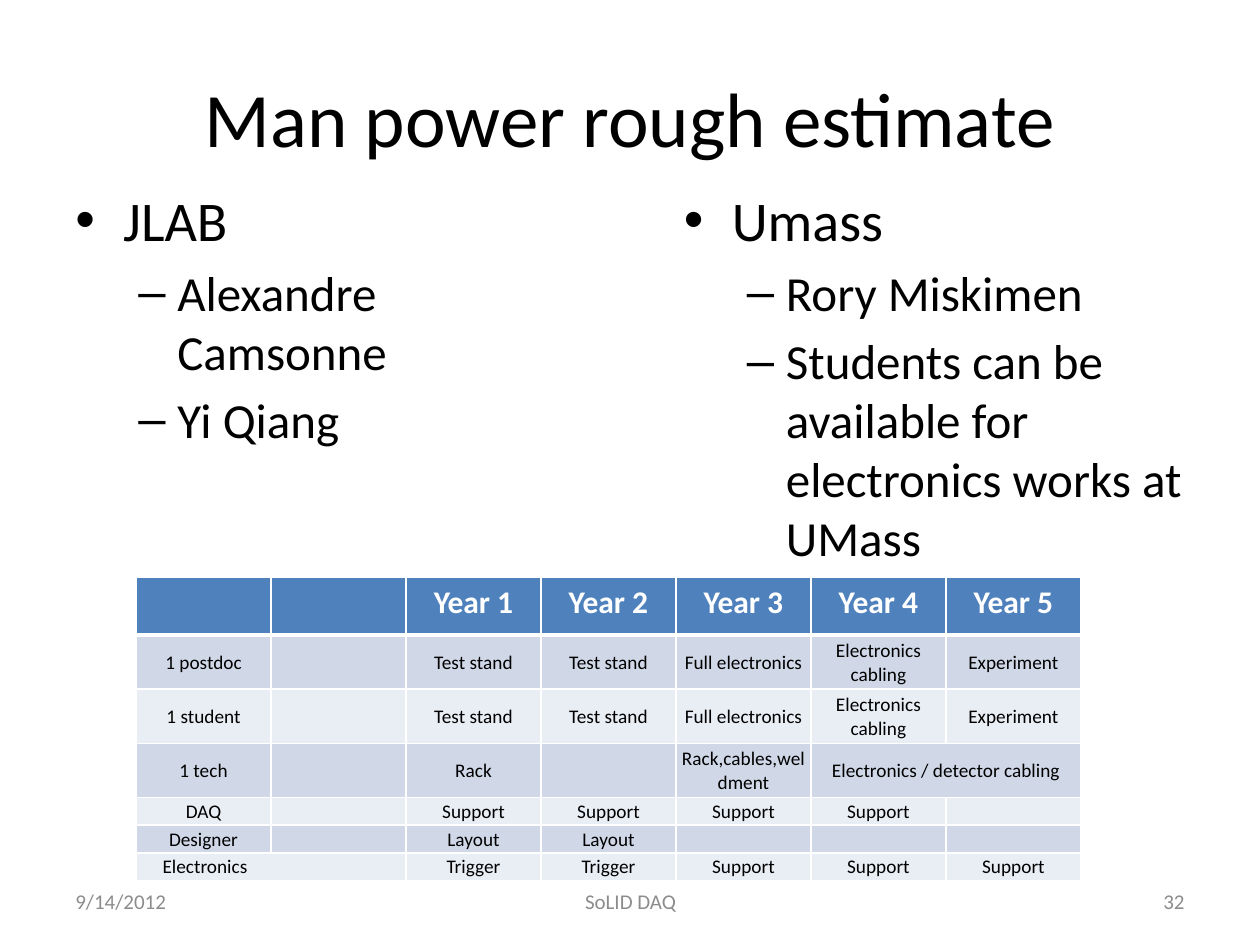
from lxml import etree
from pptx import Presentation
from pptx.dml.color import RGBColor
from pptx.enum.text import MSO_ANCHOR, PP_ALIGN
from pptx.oxml.ns import qn
from pptx.util import Pt

PX = 9144  # 100 px to the inch
FONT = "Calibri"
BLACK = RGBColor(0x00, 0x00, 0x00)
WHITE = RGBColor(0xFF, 0xFF, 0xFF)
GRAY = RGBColor(0x8C, 0x8C, 0x8C)
HEADER_BLUE = RGBColor(0x4F, 0x81, 0xBD)
BANDS = (RGBColor(0xD0, 0xD8, 0xE8), RGBColor(0xE9, 0xED, 0xF4))
LEFT, CENTER, RIGHT = PP_ALIGN.LEFT, PP_ALIGN.CENTER, PP_ALIGN.RIGHT
TOP, MIDDLE = MSO_ANCHOR.TOP, MSO_ANCHOR.MIDDLE

# Bullet level: character, text size, left margin px, hanging indent px
LEVELS = (("•", 32, 38, 38), ("–", 28, 81, 31))

JLAB = [(0, "JLAB"), (1, "Alexandre Camsonne"), (1, "Yi Qiang")]
UMASS = [
    (0, "Umass"),
    (1, "Rory Miskimen"),
    (1, "Students can be available for electronics works at UMass"),
]

ROW_HEIGHTS = (46, 43, 43, 43, 22, 22, 22)
PLAN = [
    ["", "", "Year 1", "Year 2", "Year 3", "Year 4", "Year 5"],
    ["1 postdoc", "", "Test stand", "Test stand", "Full electronics",
     "Electronics cabling", "Experiment"],
    ["1 student", "", "Test stand", "Test stand", "Full electronics",
     "Electronics cabling", "Experiment"],
    ["1 tech", "", "Rack", "", "Rack,cables,weldment",
     "Electronics / detector cabling", ""],
    ["DAQ", "", "Support", "Support", "Support", "Support", ""],
    ["Designer", "", "Layout", "Layout", "", "", ""],
    ["Electronics", "", "Trigger", "Trigger", "Support", "Support", "Support"],
]
MERGES = [(3, 5), (6, 0)]  # cells joined with their right neighbour


def px(*lengths):
    return [round(n * PX) for n in lengths]


def add_run(p, text, size, color, bold=False):
    r = p.add_run()
    r.text = text
    r.font.name = FONT
    r.font.size = Pt(size)
    r.font.bold = bold
    r.font.color.rgb = color


def add_textbox(s, box, anchor=TOP):
    tf = s.shapes.add_textbox(*px(*box)).text_frame
    tf.word_wrap = True
    tf.vertical_anchor = anchor
    return tf


def add_title(s, box, text):
    sp = s.shapes.title
    sp.left, sp.top, sp.width, sp.height = px(*box)
    sp.text_frame.vertical_anchor = MIDDLE
    p = sp.text_frame.paragraphs[0]
    p.alignment = CENTER
    add_run(p, text, 44, BLACK)


def add_bullets(s, box, items):
    tf = add_textbox(s, box)
    for i, (level, text) in enumerate(items):
        char, size, margin, hang = LEVELS[level]
        p = tf.add_paragraph() if i else tf.paragraphs[0]
        p.level = level
        p.space_before = Pt(size * 0.2)
        pPr = p._p.get_or_add_pPr()
        pPr.set("marL", str(margin * PX))
        pPr.set("indent", str(-hang * PX))
        etree.SubElement(pPr, qn("a:buFont"), typeface="Arial")
        etree.SubElement(pPr, qn("a:buChar"), char=char)
        add_run(p, text, size, BLACK)


def set_borders(cell, top, bottom):
    tcPr = cell._tc.get_or_add_tcPr()
    for side, width in (("L", 1), ("R", 1), ("T", top), ("B", bottom)):
        ln = etree.SubElement(tcPr, qn(f"a:ln{side}"), w=str(Pt(width)))
        fill = etree.SubElement(ln, qn("a:solidFill"))
        etree.SubElement(fill, qn("a:srgbClr"), val=str(WHITE))


def fill_cell(cell, row, text):
    header = row == 0
    size = 18 if header else 11
    set_borders(cell, 3 if row == 1 else 1, 3 if header else 1)
    cell.fill.solid()
    cell.fill.fore_color.rgb = HEADER_BLUE if header else BANDS[(row - 1) % 2]
    if not header:
        cell.vertical_anchor = MIDDLE
        cell.margin_left = cell.margin_top = cell.margin_right = PX
        cell.margin_bottom = 0
    p = cell.text_frame.paragraphs[0]
    p.alignment = CENTER
    if text:
        add_run(p, text, size, WHITE if header else BLACK, header)
    else:  # keeps empty rows from growing
        etree.SubElement(p._p, qn("a:endParaRPr"), sz=str(size * 100))


def add_plan(s, box):
    frame = s.shapes.add_table(len(PLAN), len(PLAN[0]), *px(*box))
    table = frame.table
    for col in table.columns:
        col.width = round(box[2] * PX / len(PLAN[0]))
    for i, (height, texts) in enumerate(zip(ROW_HEIGHTS, PLAN)):
        table.rows[i].height = height * PX
        for j, text in enumerate(texts):
            fill_cell(table.cell(i, j), i, text)
    for i, j in MERGES:
        table.cell(i, j).merge(table.cell(i, j + 1))
    # The last row label is indented instead of centred
    label = table.cell(len(PLAN) - 1, 0)
    label.margin_left = 21 * PX
    label.text_frame.paragraphs[0].alignment = LEFT


def add_footer(s, top, height):
    for left, width, align, text in (
        (50, 233, LEFT, "9/14/2012"),
        (342, 317, CENTER, "SoLID DAQ"),
        (717, 233, RIGHT, "32"),
    ):
        p = add_textbox(s, (left, top, width, height), MIDDLE).paragraphs[0]
        p.alignment = align
        add_run(p, text, 12, GRAY)


def main():
    prs = Presentation()
    prs.slide_width, prs.slide_height = px(1000, 750)
    s = prs.slides.add_slide(prs.slide_layouts[5])
    add_title(s, (50, 30, 900, 125), "Man power rough estimate")
    add_bullets(s, (50, 142, 433, 495), JLAB)
    add_bullets(s, (533, 142, 433, 495), UMASS)
    add_plan(s, (108, 458, 750, 242))
    add_footer(s, 695, 40)
    prs.save("out.pptx")


if __name__ == "__main__":
    main()
